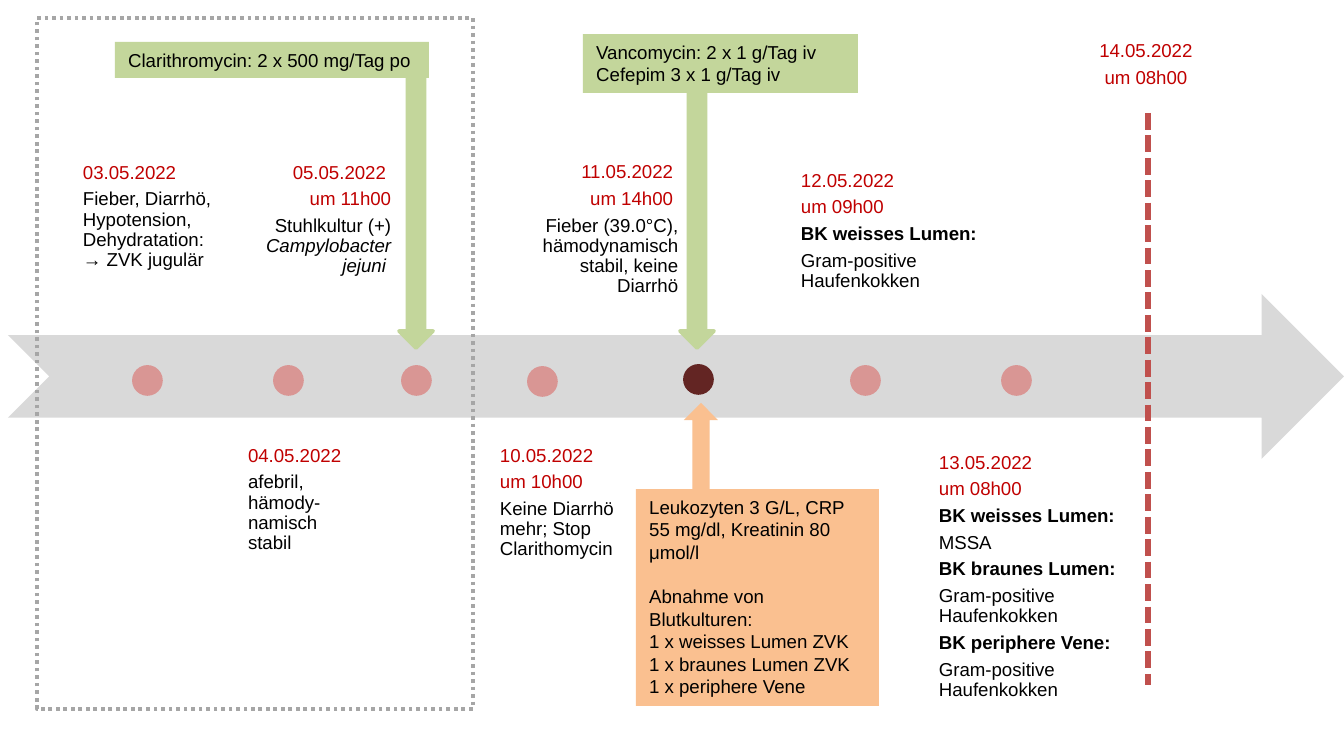
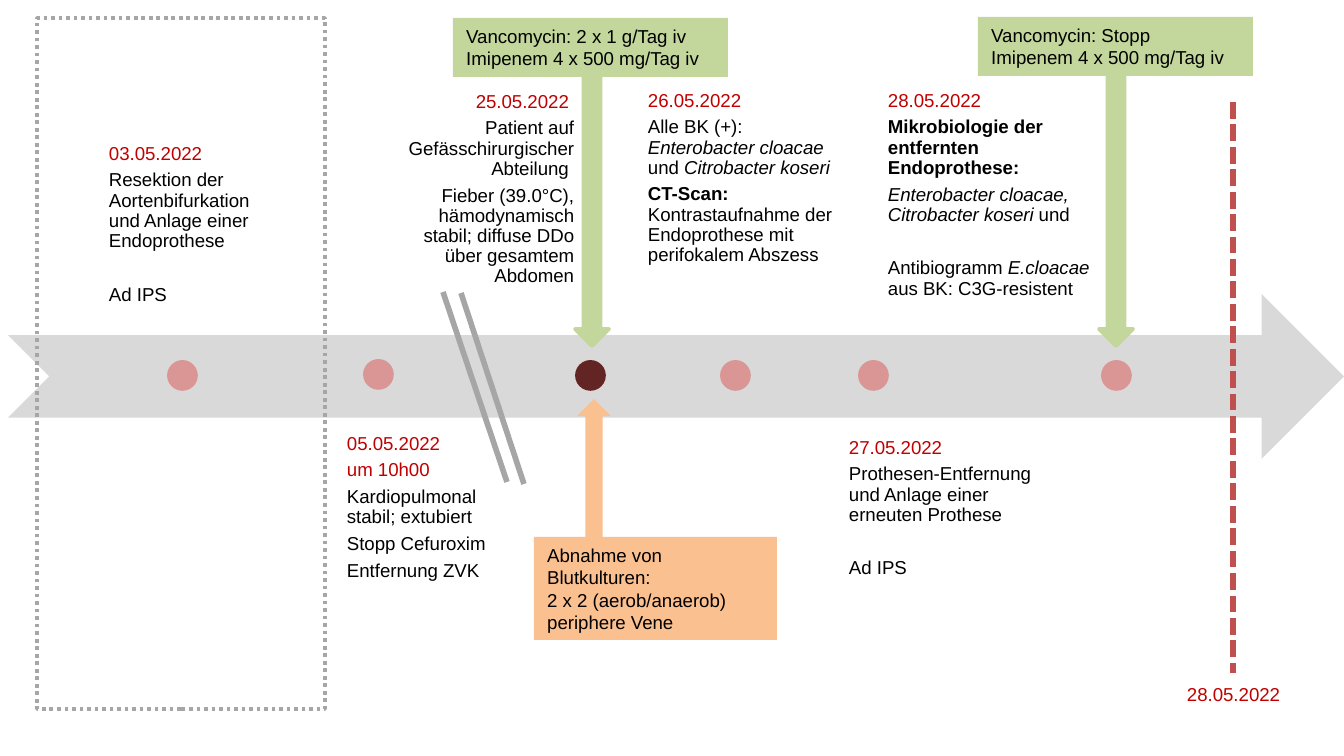
from lxml.etree import SubElement
from pptx import Presentation
from pptx.dml.color import RGBColor
from pptx.enum.dml import MSO_LINE
from pptx.enum.shapes import MSO_CONNECTOR, MSO_SHAPE
from pptx.enum.text import MSO_ANCHOR, PP_ALIGN
from pptx.oxml.ns import qn
from pptx.util import Pt

WIDTH, HEIGHT = 1344, 756
SCALE = 9144000 / WIDTH

BLACK, AXIS, DASHED = "000000", "D9D9D9", "C0504D"
GREEN, ORANGE, GREY = "C3D69B", "FAC090", "A6A6A6"
PINK, MAROON = "D99694", "632523"

BODY = {"name": "Arial", "size": Pt(10), "bold": False, "italic": False, "color": BLACK}
RED = {"color": "C00000"}
BOLD = {"bold": True}
ITALIC = {"italic": True}
NOTE_SPACING = {"line_spacing": 0.9, "space_after": Pt(3.5)}
GAP = "gap"
LEFT, RIGHT, CENTER = PP_ALIGN.LEFT, PP_ALIGN.RIGHT, PP_ALIGN.CENTER
TOP, BOTTOM = MSO_ANCHOR.TOP, MSO_ANCHOR.BOTTOM

DOT, ARROW_WIDTH, THERAPY_WIDTH, FINDING_WIDTH, FINDING_ARROW = 27, 34, 275, 243, 169
FRAME_LEFT, FRAME_TOP, FRAME_HEIGHT = 37, 18, 691

TIMELINES = [
    {
        "notes": [
            ((72, 152, 154, 157), LEFT, TOP, [
                [("03.05.2022", RED)],
                [("Fieber, Diarrhö, Hypotension, Dehydratation: → ZVK jugulär", {})],
            ]),
            ((237, 435, 119, 142), LEFT, TOP, [
                [("04.05.2022", RED)],
                [("afebril, hämody- namisch stabil", {})],
            ]),
            ((243, 152, 159, 145), RIGHT, TOP, [
                [("05.05.2022 ", RED)],
                [("um 11h00", RED)],
                [("Stuhlkultur (+) ", {}), ("Campylobacter jejuni ", ITALIC)],
            ]),
            ((489, 435, 165, 165), LEFT, TOP, [
                [("10.05.2022", RED)],
                [("um 10h00", RED)],
                [("Keine Diarrhö mehr; Stop Clarithomycin", {})],
            ]),
            ((528, 112, 161, 196), RIGHT, BOTTOM, [
                [("11.05.2022 ", RED)],
                [("um 14h00 ", RED)],
                [("Fieber (39.0°C), hämodynamisch stabil, keine Diarrhö", {})],
            ]),
            ((790, 160, 203, 165), LEFT, TOP, [
                [("12.05.2022", RED)],
                [("um 09h00", RED)],
                [("BK weisses Lumen:", BOLD)],
                [("Gram-positive Haufenkokken", {})],
            ]),
            ((928, 442, 243, 285), LEFT, TOP, [
                [("13.05.2022", RED)],
                [("um 08h00", RED)],
                [("BK weisses Lumen:", BOLD)],
                [("MSSA", {})],
                [("BK braunes Lumen:", BOLD)],
                [("Gram-positive Haufenkokken", {})],
                [("BK periphere Vene:", BOLD)],
                [("Gram-positive Haufenkokken", {})],
            ]),
        ],
        "days": [(134, 367), (275, 367), (403, 367), (529, 368), (852, 367), (1003, 367)],
        "crisis": (685, 366),
        "therapies": [
            ((399, 73, 275), (115, 42, 314, 36), [[("Clarithromycin: 2 x 500 mg/Tag po", {})]]),
            ((680, 62, 286), (583, 34, THERAPY_WIDTH, 59), [
                [("Vancomycin: 2 x 1 g/Tag iv Cefepim 3 x 1 g/Tag iv", {})],
            ]),
        ],
        "finding": ((684, 403), (636, 489, FINDING_WIDTH, 217), [
            [("Leukozyten 3 G/L, CRP 55 mg/dl, Kreatinin 80 μmol/l", {})],
            GAP,
            [("Abnahme von Blutkulturen:", {})],
            [("1 x weisses Lumen ZVK", {})],
            [("1 x braunes Lumen ZVK", {})],
            [("1 x periphere Vene", {})],
        ]),
        "breaks": [],
        "deadline": (1148, 113, 1148, 685),
        "frame_width": 436,
        "deadline_label": ((1063, 35, 171, 62), [
            [("14.05.2022 ", RED)],
            [("um 08h00 ", RED)],
        ]),
    },
    {
        "notes": [
            ((98, 133, 174, 180), LEFT, TOP, [
                [("03.05.2022", RED)],
                [("Resektion der Aortenbifurkation und Anlage einer Endoprothese", {})],
                GAP,
                [("Ad IPS", {})],
            ]),
            ((336, 423, 167, 165), LEFT, TOP, [
                [("05.05.2022", RED)],
                [("um 10h00", RED)],
                [("Kardiopulmonal stabil; extubiert", {})],
                [("Stopp Cefuroxim", {})],
                [("Entfernung ZVK", {})],
            ]),
            ((378, 82, 207, 216), RIGHT, BOTTOM, [
                [("25.05.2022 ", RED)],
                [("Patient auf Gefässchirurgischer Abteilung ", {})],
                [("Fieber (39.0°C), hämodynamisch stabil; diffuse DDo über gesamtem Abdomen", {})],
            ]),
            ((637, 80, 211, 234), LEFT, TOP, [
                [("26.05.2022", RED)],
                [("Alle BK (+): ", {}), ("Enterobacter cloacae ", ITALIC),
                 ("und ", {}), ("Citrobacter koseri", ITALIC)],
                [("CT-Scan: ", BOLD),
                 ("Kontrastaufnahme der Endoprothese mit perifokalem Abszess", {})],
            ]),
            ((838, 427, 229, 239), LEFT, TOP, [
                [("27.05.2022", RED)],
                [("Prothesen-Entfernung und Anlage einer erneuten Prothese", {})],
                GAP,
                [("Ad IPS", {})],
            ]),
            ((877, 80, 229, 239), LEFT, TOP, [
                [("28.05.2022", RED)],
                [("Mikrobiologie der entfernten Endoprothese:", BOLD)],
                [("Enterobacter cloacae, Citrobacter koseri", ITALIC), (" und", {})],
                GAP,
                [("Antibiogramm ", {}), ("E.cloacae", ITALIC), (" aus BK: C3G-resistent", {})],
            ]),
        ],
        "days": [(169, 362), (365, 361), (722, 362), (860, 362), (1103, 362)],
        "crisis": (577, 362),
        "therapies": [
            ((575, 60, 286), (453, 18, THERAPY_WIDTH, 59), [
                [("Vancomycin: 2 x 1 g/Tag iv Imipenem 4 x 500 mg/Tag iv", {})],
            ]),
            ((1099, 60, 286), (978, 17, THERAPY_WIDTH, 59), [
                [("Vancomycin: Stopp", {})],
                [("Imipenem 4 x 500 mg/Tag iv", {})],
            ]),
        ],
        "finding": ((577, 399), (534, 537, FINDING_WIDTH, 103), [
            [("Abnahme von Blutkulturen:", {})],
            [("2 x 2 (aerob/anaerob) periphere Vene", {})],
        ]),
        "breaks": [(443, 292, 507, 482), (461, 293, 524, 484)],
        "deadline": (1233, 102, 1233, 673),
        "frame_width": 288,
        "deadline_label": ((1173, 679, 121, 34), [[("28.05.2022", RED)]]),
    },
]


def px(*lengths):
    return [round(length * SCALE) for length in lengths]


def rgb(code):
    return RGBColor.from_string(code)


def apply(target, values):
    for name, value in values.items():
        setattr(target, name, value)


def draw(slide, preset, box, fill=None, line=None, dash=None):
    part = slide.shapes.add_shape(preset, *px(*box))
    part.shadow.inherit = False
    if fill:
        part.fill.solid()
        part.fill.fore_color.rgb = rgb(fill)
    else:
        part.fill.background()
    if line:
        part.line.color.rgb = rgb(line)
        apply(part.line, {"width": Pt(2), "dash_style": dash})
    else:
        part.line.fill.background()
    return part


def rule(slide, ends, color, dash=None):
    connector = slide.shapes.add_connector(MSO_CONNECTOR.STRAIGHT, *px(*ends))
    connector.line.color.rgb = rgb(color)
    apply(connector.line, {"width": Pt(3), "dash_style": dash})
    SubElement(connector.element.spPr, qn("a:effectLst"))


def write(part, paragraphs, align=LEFT, spacing=None, gap=Pt(12), **frame_format):
    frame = part.text_frame
    apply(frame, {"word_wrap": True, "vertical_anchor": TOP, **frame_format})
    paragraph, after_gap = frame.paragraphs[0], False
    for index, runs in enumerate(paragraphs):
        if runs == GAP:
            after_gap = True
            continue
        if index:
            paragraph = frame.add_paragraph()
        apply(paragraph, {"alignment": align, **(spacing or {})})
        if after_gap:
            paragraph.space_before = gap
            after_gap = False
        for text, style in runs:
            run = paragraph.add_run()
            run.text = text
            values = {**BODY, **style}
            run.font.color.rgb = rgb(values.pop("color"))
            apply(run.font, values)


def add_note(slide, box, align, anchor, paragraphs):
    inset = px(11)[0]
    sides = ("left", "top", "right", "bottom")
    margins = {f"margin_{side}": inset for side in sides}
    write(slide.shapes.add_textbox(*px(*box)), paragraphs, align, NOTE_SPACING,
          gap=Pt(14.4), vertical_anchor=anchor, **margins)


def add_timeline(slide, timeline):
    draw(slide, MSO_SHAPE.NOTCHED_RIGHT_ARROW, (8, 294, 1336, 165), AXIS)
    for note in timeline["notes"]:
        add_note(slide, *note)

    dots = [(day, PINK) for day in timeline["days"]] + [(timeline["crisis"], MAROON)]
    for place, color in dots:
        draw(slide, MSO_SHAPE.OVAL, (*place, DOT, DOT), color, color)

    for (left, top, length), box, dose in timeline["therapies"]:
        draw(slide, MSO_SHAPE.DOWN_ARROW, (left, top, ARROW_WIDTH, length), GREEN, GREEN)
        write(draw(slide, MSO_SHAPE.RECTANGLE, box, GREEN), dose)

    place, box, finding = timeline["finding"]
    arrow = draw(slide, MSO_SHAPE.DOWN_ARROW, (*place, ARROW_WIDTH, FINDING_ARROW), ORANGE)
    arrow.rotation = 180
    write(draw(slide, MSO_SHAPE.RECTANGLE, box, ORANGE), finding)

    for ends in timeline["breaks"]:
        rule(slide, ends, GREY)
    rule(slide, timeline["deadline"], DASHED, MSO_LINE.SQUARE_DOT)
    frame = (FRAME_LEFT, FRAME_TOP, timeline["frame_width"], FRAME_HEIGHT)
    draw(slide, MSO_SHAPE.RECTANGLE, frame, line=GREY, dash=MSO_LINE.ROUND_DOT)

    box, label = timeline["deadline_label"]
    write(slide.shapes.add_textbox(*px(*box)), label, CENTER, NOTE_SPACING,
          margin_left=0, margin_right=0)


def main():
    deck = Presentation()
    deck.slide_width, deck.slide_height = px(WIDTH, HEIGHT)
    for timeline in TIMELINES:
        add_timeline(deck.slides.add_slide(deck.slide_layouts[6]), timeline)
    deck.save("out.pptx")


if __name__ == "__main__":
    main()
